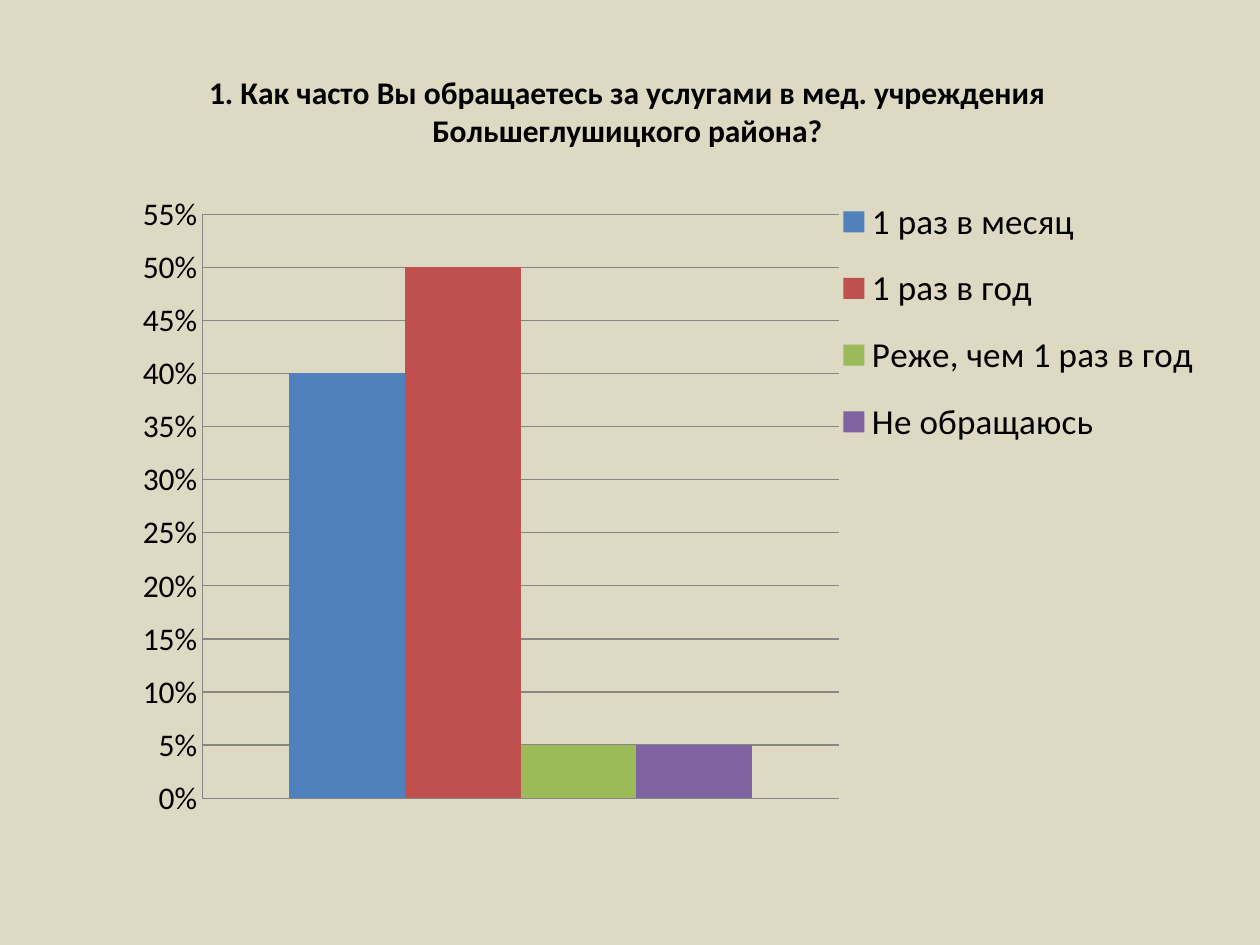
from dataclasses import dataclass

from lxml import etree
from pptx import Presentation
from pptx import util as u
from pptx.chart.data import CategoryChartData
from pptx.dml.color import RGBColor
from pptx.enum import chart as kinds

FONT = "Calibri"
COLORS = {
    "background": "DDD9C3",
    "text": "000000",
    "grid": "868686",
    "blue": "4F81BD",
    "red": "C0504D",
    "green": "9BBB59",
    "purple": "8064A2",
}
QUESTION = ("1. Как часто Вы обращаетесь за услугами в мед. учреждения "
            "Большеглушицкого района?")


@dataclass
class Answer:
    name: str
    share: float
    color: str


ANSWERS = [
    Answer("1 раз в месяц", 0.4, "blue"),
    Answer("1 раз в год", 0.5, "red"),
    Answer("Реже, чем 1 раз в год", 0.05, "green"),
    Answer("Не обращаюсь", 0.05, "purple"),
]


def rgb(name: str) -> RGBColor:
    return RGBColor.from_string(COLORS[name])


def style_font(font, size: int, bold: bool = False) -> None:
    font.name = FONT
    font.size = u.Pt(size)
    font.bold = bold
    font.color.rgb = rgb("text")


def place(element, before: tuple, inner: bool = False, **fractions: float) -> None:
    namespace = element.nsmap["c"]
    for old in element.findall(f"{{{namespace}}}layout"):
        element.remove(old)
    layout = etree.Element(f"{{{namespace}}}layout")
    manual = etree.SubElement(layout, f"{{{namespace}}}manualLayout")
    settings = {"layoutTarget": "inner"} if inner else {}
    settings.update(xMode="edge", yMode="edge")
    settings.update(fractions)
    for tag, value in settings.items():
        etree.SubElement(manual, f"{{{namespace}}}{tag}").set("val", str(value))
    following = next((child for child in element
                      if etree.QName(child).localname in before), None)
    if following is None:
        element.append(layout)
    else:
        following.addprevious(layout)


def add_answer_chart(page, answers: list[Answer]) -> None:
    data = CategoryChartData(number_format="0%")
    data.categories = ["1"]
    for answer in answers:
        data.add_series(answer.name, [answer.share])
    chart = page.shapes.add_chart(
        kinds.XL_CHART_TYPE.COLUMN_CLUSTERED, u.Inches(0.59), u.Inches(0.44),
        u.Inches(9.06), u.Inches(6.06), data).chart
    style_font(chart.font, 18)

    chart.has_title = True
    title = chart.chart_title
    title.text_frame.text = QUESTION
    style_font(title.text_frame.paragraphs[0].runs[0].font, 18, bold=True)
    title.include_in_layout = False
    place(title._element, ("overlay", "spPr", "txPr"), x=0.113, y=0.012)

    chart.has_legend = True
    legend = chart.legend
    legend.position = kinds.XL_LEGEND_POSITION.RIGHT
    legend.include_in_layout = False
    style_font(legend.font, 20)
    place(legend._element, ("overlay", "spPr", "txPr"), x=0.667, y=0.159, w=0.32, h=0.38)

    plot = chart.plots[0]
    plot.gap_width = 150
    plot.overlap = 0
    plot.vary_by_categories = False
    for series, answer in zip(plot.series, answers):
        series.format.fill.solid()
        series.format.fill.fore_color.rgb = rgb(answer.color)

    chart.category_axis.visible = False
    axis = chart.value_axis
    axis.minimum_scale = 0
    axis.maximum_scale = 0.55
    axis.major_unit = 0.05
    axis.major_tick_mark = kinds.XL_TICK_MARK.NONE
    axis.minor_tick_mark = kinds.XL_TICK_MARK.NONE
    axis.tick_labels.number_format = "0%"
    axis.tick_labels.number_format_is_linked = False
    style_font(axis.tick_labels.font, 18)
    axis.has_major_gridlines = True
    for line in (axis.format.line, axis.major_gridlines.format.line):
        line.color.rgb = rgb("grid")
        line.width = u.Pt(0.75)

    plot_area = plot._element.getparent()
    place(plot_area, ("barChart",), inner=True, x=0.112, y=0.208, w=0.558, h=0.765)


def main() -> None:
    deck = Presentation()
    deck.slide_width = u.Inches(10)
    deck.slide_height = u.Inches(7.5)
    page = deck.slides.add_slide(deck.slide_layouts[6])
    page.background.fill.solid()
    page.background.fill.fore_color.rgb = rgb("background")
    add_answer_chart(page, ANSWERS)
    deck.save("out.pptx")


if __name__ == "__main__":
    main()
